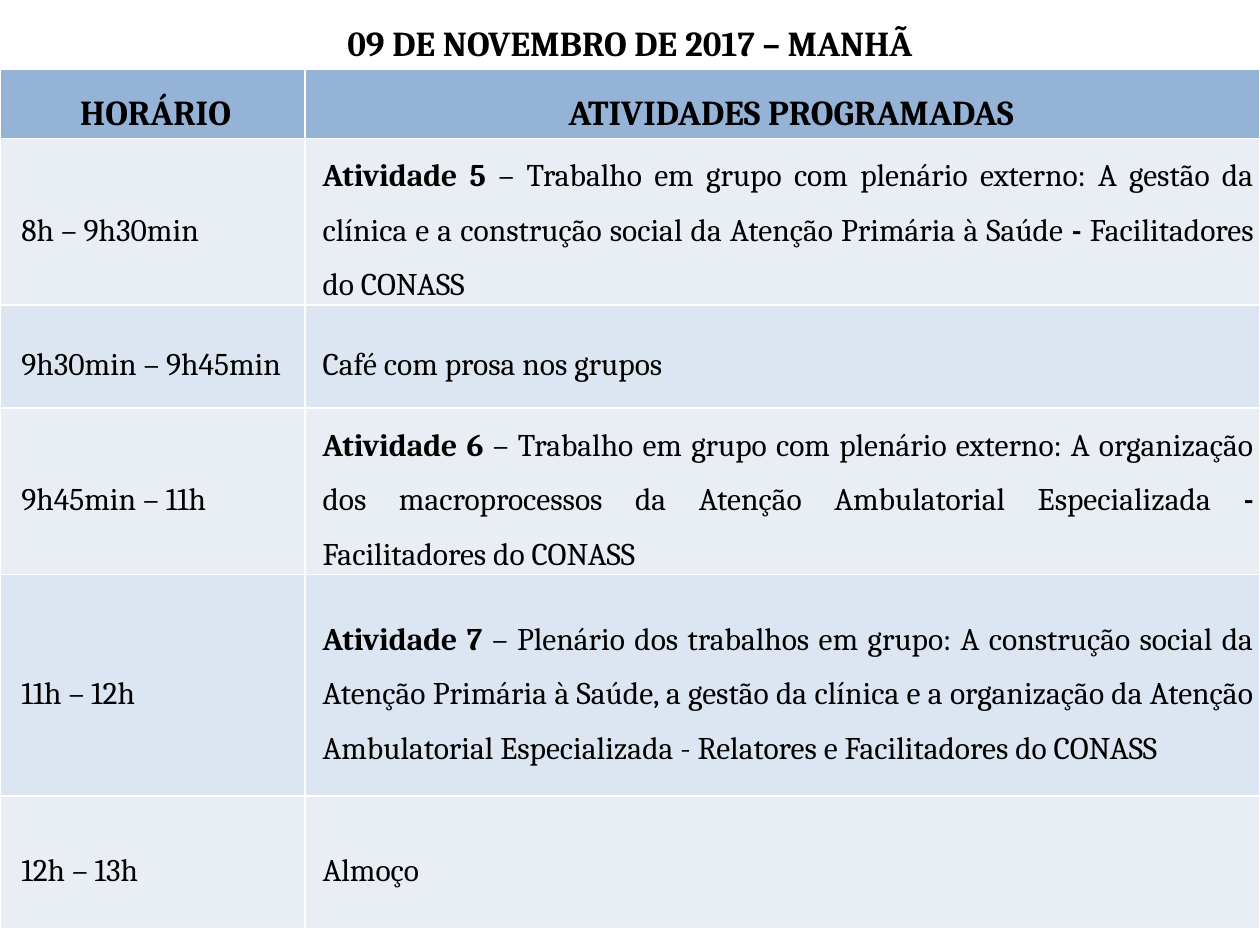
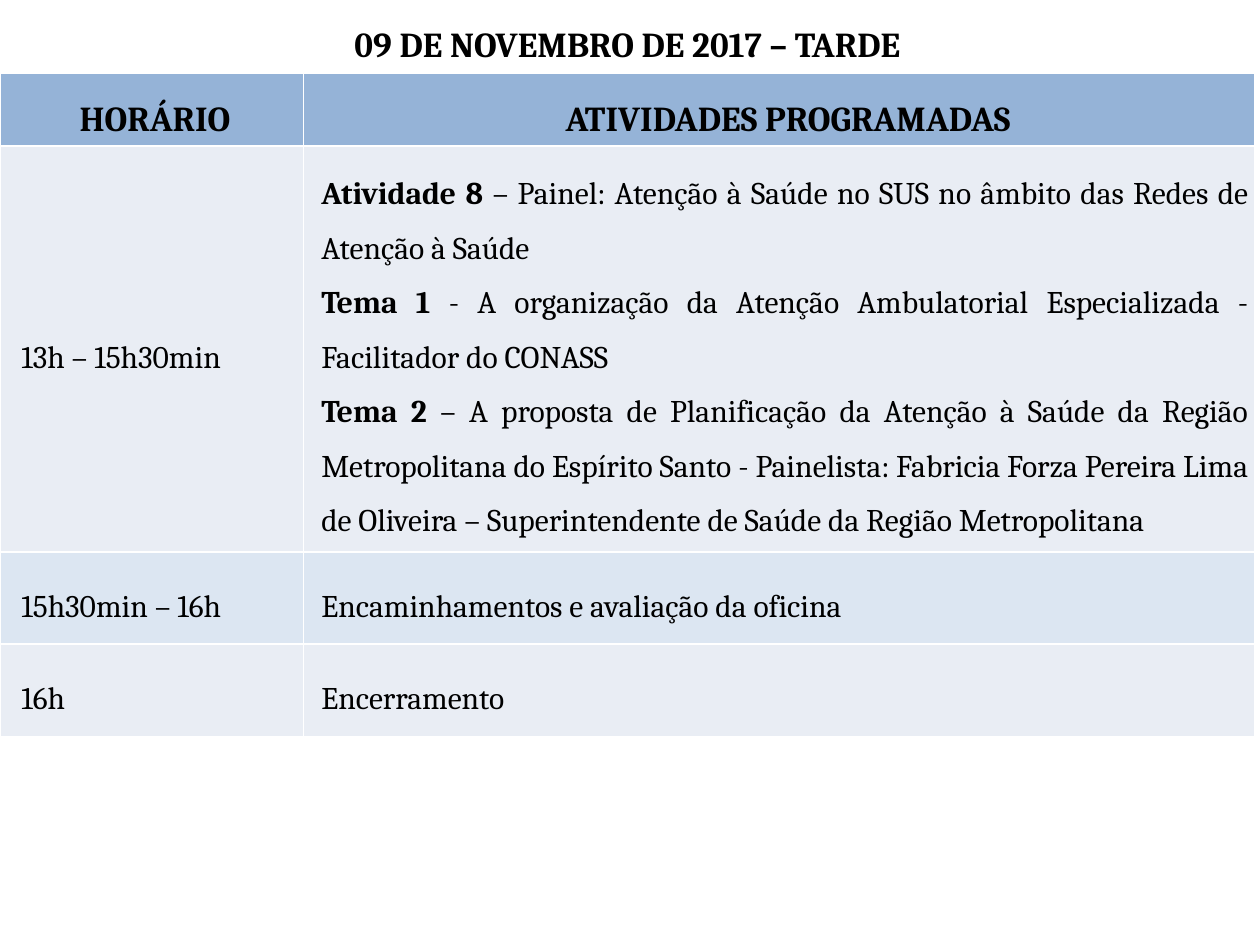
from lxml import etree
from pptx import Presentation
from pptx.dml.color import RGBColor
from pptx.enum import text as t
from pptx.oxml import ns
from pptx.util import Inches, Pt

HEADS = ["HORÁRIO", "ATIVIDADES PROGRAMADAS"]
DAYS = [
    {
        "title": "09 DE NOVEMBRO DE 2017 – MANHÃ",
        "cols": [2.42, 7.58],
        "rows": [0.55, 0.55, 1.32, 0.82, 1.32, 1.76, 1.05],
        "plan": [
            ("8h – 9h30min", [
                "**Atividade 5** – Trabalho em grupo com plenário externo: A gestão da clínica "
                "e a construção social da Atenção Primária à Saúde** - **Facilitadores do CONASS"]),
            ("9h30min – 9h45min", ["Café com prosa nos grupos"]),
            ("9h45min – 11h", [
                "**Atividade 6** – Trabalho em grupo com plenário externo: A organização dos "
                "macroprocessos da Atenção Ambulatorial Especializada** - **Facilitadores do CONASS"]),
            ("11h – 12h", [
                "**Atividade 7** – Plenário dos trabalhos em grupo: A construção social da Atenção "
                "Primária à Saúde, a gestão da clínica e a organização da Atenção Ambulatorial "
                "Especializada - Relatores e Facilitadores do CONASS"]),
            ("12h – 13h", ["Almoço"]),
        ],
    },
    {
        "title": "09 DE NOVEMBRO DE 2017 – TARDE",
        "cols": [2.41, 7.55],
        "rows": [0.58, 0.58, 3.22, 0.73, 0.74],
        "plan": [
            ("13h – 15h30min", [
                "**Atividade 8** – Painel: Atenção à Saúde no SUS no âmbito das Redes de Atenção à Saúde",
                "**Tema 1 **- A organização da Atenção Ambulatorial Especializada - Facilitador do CONASS",
                "**Tema 2** – A proposta de Planificação da Atenção à Saúde da Região Metropolitana "
                "do Espírito Santo - Painelista: Fabricia Forza Pereira Lima de Oliveira – "
                "Superintendente de Saúde da Região Metropolitana"]),
            ("15h30min – 16h", ["Encaminhamentos e avaliação da oficina"]),
            ("16h", ["Encerramento"]),
        ],
    },
]
HUES = {"ink": "000000", "page": "FFFFFF", "head": "95B3D7", "odd": "E9EDF4", "even": "DCE6F2"}
FONT = "Cambria"
ALIGN = t.PP_ALIGN


def write(cell, lines, size=18, bold=False, align=ALIGN.LEFT, indent=0):
    frame = cell.text_frame
    for i, line in enumerate(lines):
        para = frame.add_paragraph() if i else frame.paragraphs[0]
        para.alignment, para.line_spacing = align, 1.5
        para._p.get_or_add_pPr().set("marL", str(Inches(indent)))
        for j, part in enumerate(line.split("**")):
            if part:
                run = para.add_run()
                run.text = part
                font = run.font
                font.name, font.size = FONT, Pt(size)
                font.bold = bold or j % 2 == 1
                font.color.rgb = RGBColor.from_string(HUES["ink"])


def dress(cell, hue, pads):
    cell.vertical_anchor = t.MSO_ANCHOR.MIDDLE
    cell.margin_left, cell.margin_top, cell.margin_right, cell.margin_bottom = map(Inches, pads)
    props = cell._tc.get_or_add_tcPr()
    for side in "LRTB":
        edge = etree.SubElement(props, ns.qn(f"a:ln{side}"), w=str(Pt(1)))
        paint = etree.SubElement(edge, ns.qn("a:solidFill"))
        etree.SubElement(paint, ns.qn("a:srgbClr"), val=HUES["page"])
    cell.fill.solid()
    cell.fill.fore_color.rgb = RGBColor.from_string(HUES[hue])


def build(slide, day):
    cols, rows = day["cols"], day["rows"]
    grid = slide.shapes.add_table(len(rows), len(cols), 0, 0,
                                  Inches(sum(cols)), Inches(sum(rows))).table
    grid.first_row = grid.horz_banding = False
    for col, width in zip(grid.columns, cols):
        col.width = Inches(width)
    for row, height in zip(grid.rows, rows):
        row.height = Inches(height)
    for r in range(len(rows)):
        hue = ("page", "head")[r] if r < 2 else ("odd", "even")[r % 2]
        pads = ((0.03,) * 4, (0.08, 0.03, 0.03, 0.03))[r] if r < 2 else (0.05, 0, 0.05, 0)
        for c in range(len(cols)):
            dress(grid.cell(r, c), hue, pads)

    top = {"size": 20, "bold": True, "align": ALIGN.CENTER}
    grid.cell(0, 0).merge(grid.cell(0, 1))
    write(grid.cell(0, 0), [day["title"]], **top)
    for c, head in enumerate(HEADS):
        write(grid.cell(1, c), [head], indent=0.09 * c, **top)
    for r, (hour, lines) in enumerate(day["plan"], 2):
        write(grid.cell(r, 0), [hour], indent=0.12)
        write(grid.cell(r, 1), lines, align=ALIGN.JUSTIFY, indent=0.09)


def main():
    deck = Presentation()
    deck.slide_width, deck.slide_height = Inches(10), Inches(7.5)
    for day in DAYS:
        build(deck.slides.add_slide(deck.slide_layouts[6]), day)
    deck.save("out.pptx")


if __name__ == "__main__":
    main()
